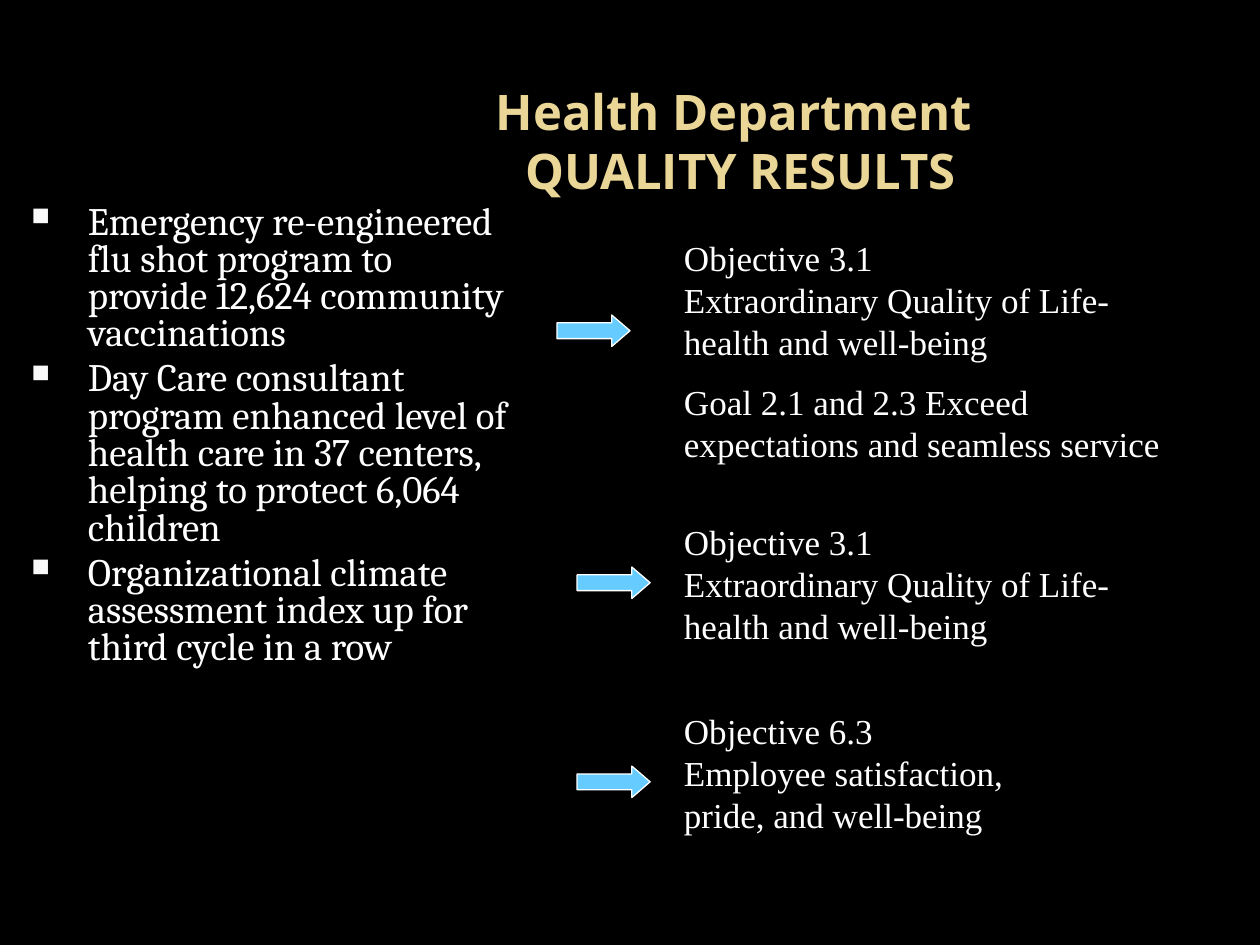
from lxml import etree
from pptx import Presentation
from pptx import util as u
from pptx.dml.color import RGBColor
from pptx.enum import shapes, text
from pptx.oxml.ns import qn


def color(value):
    return RGBColor.from_string(value)


class SlideBuilder:
    WHITE = "FFFFFF"
    GOLD = "EAD696"
    BLUE = "66CCFF"
    BULLET = "F9F9F9"

    def __init__(self, prs):
        self.s = prs.slides.add_slide(prs.slide_layouts[6])
        fill = self.s.background.fill
        fill.solid()
        fill.fore_color.rgb = color("000000")

    def text_frame(self, box):
        tf = self.s.shapes.add_textbox(*map(u.Inches, box)).text_frame
        tf.word_wrap = True
        return tf

    def paragraph(self, tf, lines, font, size, hex_color=WHITE, bold=False):
        p = tf.paragraphs[0]
        if p.runs:
            p = tf.add_paragraph()
        for i, line in enumerate(lines):
            if i:
                p.add_line_break()
            r = p.add_run()
            r.text = line
            r.font.name = font
            r.font.size = u.Pt(size)
            r.font.bold = bold
            r.font.color.rgb = color(hex_color)
        return p

    def title(self, box, lines):
        tf = self.text_frame(box)
        tf.vertical_anchor = text.MSO_ANCHOR.MIDDLE
        p = self.paragraph(tf, lines, "Open Sans", 28, self.GOLD, True)
        p.alignment = text.PP_ALIGN.CENTER

    def bullets(self, box, items):
        tf = self.text_frame(box)
        for item in items:
            p = self.paragraph(tf, [item], "Cambria", 22.2)
            p.line_spacing = 0.8
            p.space_before = u.Pt(4.4)
            pPr = p._p.get_or_add_pPr()
            pPr.set("marL", str(u.Inches(0.6)))
            pPr.set("indent", str(u.Inches(-0.45)))
            tint = etree.SubElement(pPr, qn("a:buClr"))
            etree.SubElement(tint, qn("a:srgbClr"), val=self.BULLET)
            etree.SubElement(pPr, qn("a:buSzPct"), val="65000")
            etree.SubElement(pPr, qn("a:buChar"), char="■")

    def objective(self, box, paragraphs):
        tf = self.text_frame(box)
        tf.auto_size = text.MSO_AUTO_SIZE.SHAPE_TO_FIT_TEXT
        for i, lines in enumerate(paragraphs):
            p = self.paragraph(tf, lines, "Times New Roman", 20)
            if i:
                p.space_before = u.Pt(10)

    def arrow(self, left, top):
        box = map(u.Inches, (left, top, 0.58, 0.25))
        sp = self.s.shapes.add_shape(shapes.MSO_SHAPE.RIGHT_ARROW, *box)
        sp.shadow.inherit = False
        sp.adjustments[0] = 0.5
        sp.adjustments[1] = 0.58
        sp.fill.solid()
        sp.fill.fore_color.rgb = color(self.BLUE)
        sp.line.color.rgb = color(self.WHITE)
        sp.line.width = u.Pt(0.75)


def main():
    prs = Presentation()
    prs.slide_width = u.Inches(10)
    prs.slide_height = u.Inches(7.5)
    slide = SlideBuilder(prs)

    slide.title((1.75, 0.33, 8.25, 1.57), ["Health Department ", "QUALITY RESULTS"])
    slide.bullets((0, 1.58, 4.17, 4.5), [
        "Emergency re-engineered flu shot program to provide 12,624 community vaccinations",
        "Day Care consultant program enhanced level of health care in 37 centers, "
        "helping to protect 6,064 children",
        "Organizational climate assessment index up for third cycle in a row",
    ])

    quality_of_life = ["Objective 3.1", "Extraordinary Quality of Life- health and well-being"]
    service_goal = ["Goal 2.1 and 2.3 Exceed expectations and seamless service"]
    satisfaction = ["Objective 6.3", "Employee satisfaction, pride, and well-being"]
    slide.objective((5.33, 1.83, 4.25, 1.93), [quality_of_life, service_goal])
    slide.objective((5.33, 4.08, 3.75, 1.1), [quality_of_life])
    slide.objective((5.33, 5.58, 3.33, 1.1), [satisfaction])

    for left, top in ((4.42, 2.5), (4.58, 4.5), (4.58, 6.08)):
        slide.arrow(left, top)

    prs.save("out.pptx")


if __name__ == "__main__":
    main()
